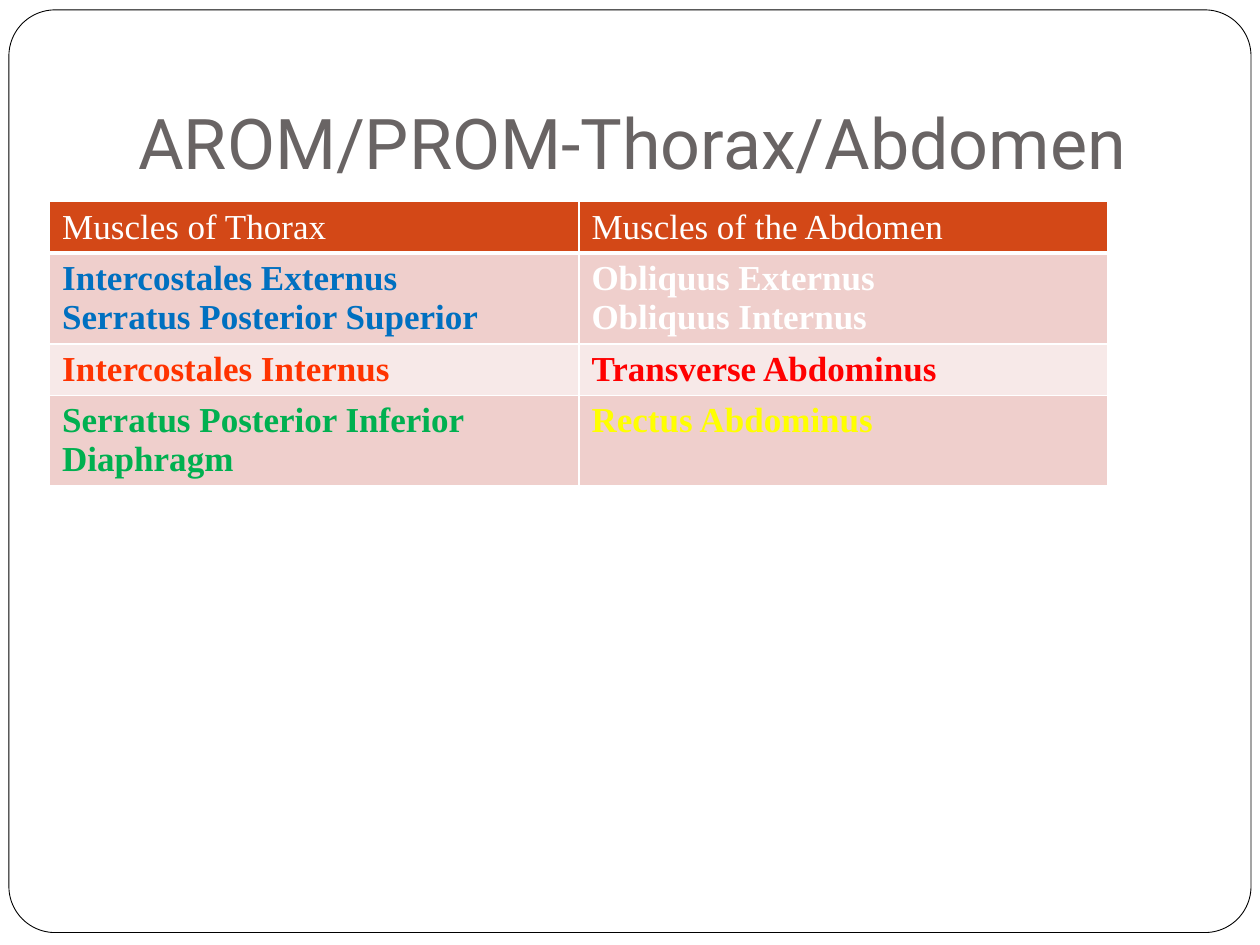
from dataclasses import dataclass

import lxml.etree
import pptx
import pptx.dml.color
import pptx.enum.shapes
import pptx.enum.text
import pptx.oxml.ns
import pptx.util

Cm = pptx.util.Cm
Pt = pptx.util.Pt


@dataclass(frozen=True)
class Theme:
    """Colours, fonts and sizes of the deck."""
    paper: str = "FFFFFF"
    outline: str = "000000"
    title: str = "696464"
    header: str = "D34817"
    bands: tuple = ("EFCFCC", "F7E9E8")
    blue: str = "0070C0"
    orange: str = "FF3300"
    green: str = "00B050"
    red: str = "FF0000"
    yellow: str = "FFFF00"
    title_font: str = "Roboto"
    body_font: str = "Times New Roman"
    title_size: int = 40
    body_size: int = 20


@dataclass(frozen=True)
class Box:
    """A region of the page, in centimetres."""
    left: float
    top: float
    width: float
    height: float

    def lengths(self):
        """Return the region as four lengths."""
        return Cm(self.left), Cm(self.top), Cm(self.width), Cm(self.height)


THEME = Theme()
MUSCLES = [
    [(["Muscles of Thorax"], THEME.paper),
     (["Muscles of the Abdomen"], THEME.paper)],
    [(["Intercostales Externus", "Serratus Posterior Superior"], THEME.blue),
     (["Obliquus Externus", "Obliquus Internus"], THEME.paper)],
    [(["Intercostales Internus"], THEME.orange),
     (["Transverse Abdominus"], THEME.red)],
    [(["Serratus Posterior Inferior", "Diaphragm"], THEME.green),
     (["Rectus Abdominus"], THEME.yellow)],
]


def rgb(code):
    """Turn a hex code into a colour."""
    return pptx.dml.color.RGBColor.from_string(code)


def style_paragraph(para, font, size, color, bold=False):
    """Set the font of a whole paragraph."""
    para.font.name = font
    para.font.size = Pt(size)
    para.font.color.rgb = rgb(color)
    para.font.bold = bold


def add_frame(page, box):
    """Draw the rounded frame around the page."""
    frame = page.shapes.add_shape(
        pptx.enum.shapes.MSO_SHAPE.ROUNDED_RECTANGLE, *box.lengths())
    frame.adjustments[0] = 0.05
    frame.shadow.inherit = False
    frame.fill.solid()
    frame.fill.fore_color.rgb = rgb(THEME.paper)
    frame.line.color.rgb = rgb(THEME.outline)
    frame.line.width = Pt(0.5)


def add_title(page, box, text):
    """Write the title at the bottom of its box."""
    frame = page.shapes.add_textbox(*box.lengths()).text_frame
    frame.word_wrap = True
    frame.vertical_anchor = pptx.enum.text.MSO_ANCHOR.BOTTOM
    frame.margin_bottom = Cm(0.25)
    frame.text = text
    style_paragraph(frame.paragraphs[0], THEME.title_font,
                    THEME.title_size, THEME.title)


def set_borders(cell, bottom):
    """Draw white cell borders, with the given bottom width in points."""
    properties = cell._tc.get_or_add_tcPr()
    for side, width in (("L", 1), ("R", 1), ("T", 1), ("B", bottom)):
        line = lxml.etree.SubElement(
            properties, pptx.oxml.ns.qn(f"a:ln{side}"), w=str(Pt(width)))
        fill = lxml.etree.SubElement(line, pptx.oxml.ns.qn("a:solidFill"))
        lxml.etree.SubElement(
            fill, pptx.oxml.ns.qn("a:srgbClr"), val=THEME.paper)


def fill_cell(cell, lines, color, is_header, band):
    """Write and colour one table cell."""
    set_borders(cell, 3 if is_header else 1)
    cell.fill.solid()
    cell.fill.fore_color.rgb = rgb(band)
    cell.text = "\n".join(lines)
    for para in cell.text_frame.paragraphs:
        style_paragraph(para, THEME.body_font, THEME.body_size, color,
                        bold=not is_header)


def add_muscle_table(page, box, rows):
    """Build the muscle table, each row as tall as its longest cell."""
    table = page.shapes.add_table(
        len(rows), len(rows[0]), *box.lengths()).table
    table.horz_banding = False
    table.first_row = False
    for column in table.columns:
        column.width = Cm(box.width / len(rows[0]))
    for row_index, row in enumerate(rows):
        line_count = max(len(lines) for lines, _ in row)
        table.rows[row_index].height = Cm(0.25 + 0.79 * line_count)
        is_header = row_index == 0
        band = THEME.header if is_header else THEME.bands[(row_index - 1) % 2]
        for column_index, (lines, color) in enumerate(row):
            fill_cell(table.cell(row_index, column_index), lines, color,
                      is_header, band)


def main():
    """Build and save the deck."""
    deck = pptx.Presentation()
    deck.slide_width, deck.slide_height = Cm(25.4), Cm(19.05)
    page = deck.slides.add_slide(deck.slide_layouts[6])
    add_frame(page, Box(0.18, 0.2, 25.04, 18.6))
    add_muscle_table(page, Box(1, 4.06, 21.34, 5.74), MUSCLES)
    add_title(page, Box(2.54, 0.76, 21.59, 3.18), "AROM/PROM-Thorax/Abdomen")
    deck.save("out.pptx")


if __name__ == "__main__":
    main()
